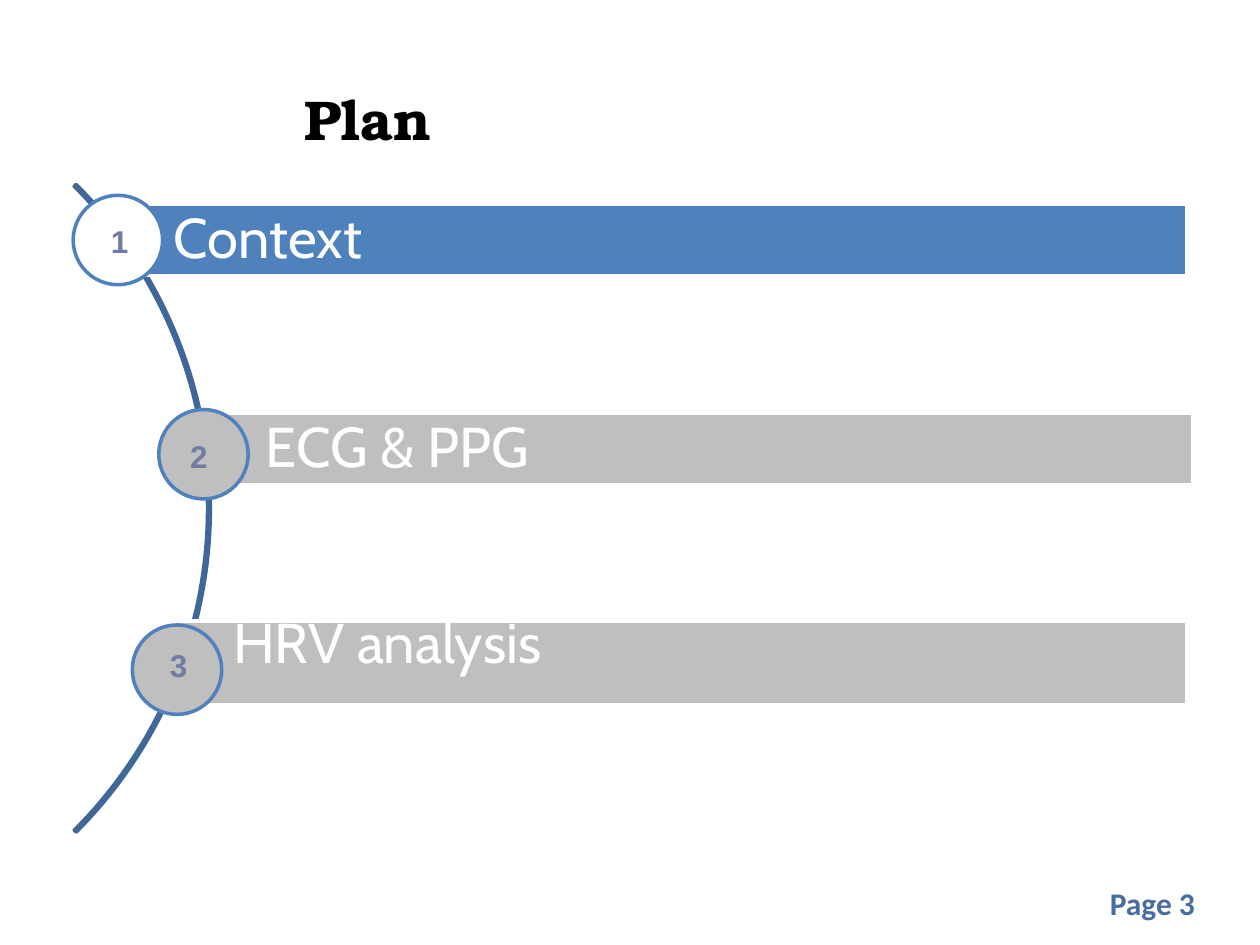
from pptx import Presentation
from pptx.dml.color import RGBColor
from pptx.enum.shapes import MSO_SHAPE
from pptx.enum.text import MSO_ANCHOR
from pptx.util import Pt

COLORS = {
    "white": "FFFFFF",
    "black": "000000",
    "blue": "4F81BD",
    "gray": "BFBFBF",
    "arc": "3F6797",
    "number": "727CA3",
    "page": "486DA2",
}
CIRCLE = 51.1
STEPS = [
    ("1", "Context", "blue", "white", (67, 116.6, 611.3, 41), (41.8, 111.6), (56.2, 123.1), 6.5),
    ("2", "ECG & PPG", "gray", "gray", (119.5, 236.2, 562.3, 41), (90.7, 234), (101.5, 246.2), 6.5),
    ("3", "HRV analysis", "gray", "gray", (100.8, 355, 577.4, 47.5), (75.6, 357.1), (90, 365.8), 26),
]


def color(name):
    """Return the named palette colour."""
    return RGBColor.from_string(COLORS[name])


def add_text(frame, text, size, font, tone, bold=False):
    """Write one styled paragraph into a text frame and return it."""
    para = frame.paragraphs[0]
    para.text = text
    para.font.size = Pt(size)
    para.font.name = font
    para.font.bold = bold
    para.font.color.rgb = color(tone)
    return para


def add_label(page, box, text, size, font, tone, wrap=True, anchor=MSO_ANCHOR.TOP):
    """Place a bold text box in the given box."""
    label = page.shapes.add_textbox(*map(Pt, box))
    label.text_frame.word_wrap = wrap
    label.text_frame.vertical_anchor = anchor
    add_text(label.text_frame, text, size, font, tone, bold=True)
    return label


def add_outlined(page, preset, box, fill, line):
    """Place a preset shape with a two-point outline."""
    shape = page.shapes.add_shape(preset, *map(Pt, box))
    shape.shadow.inherit = False
    if fill:
        shape.fill.solid()
        shape.fill.fore_color.rgb = color(fill)
    else:
        shape.fill.background()
    shape.line.color.rgb = color(line)
    shape.line.width = Pt(2)
    return shape


def add_arc(page, box):
    """Draw the thin arc that links the steps."""
    arc = add_outlined(page, MSO_SHAPE.BLOCK_ARC, box, None, "arc")
    for index, value in enumerate((189, 27, 0.003)):
        arc.adjustments[index] = value


def add_bar(page, box, title, fill, bottom):
    """Draw a step's bar with its title and bottom margin."""
    bar = add_outlined(page, MSO_SHAPE.RECTANGLE, box, fill, "white")
    frame = bar.text_frame
    frame.word_wrap = True
    frame.vertical_anchor = MSO_ANCHOR.MIDDLE
    frame.margin_left = Pt(32.4)
    frame.margin_top = frame.margin_right = Pt(6.5)
    frame.margin_bottom = Pt(bottom)
    para = add_text(frame, title, 32, "Cabin", "white")
    para.alignment = 1
    para.line_spacing = 0.9


def add_number(page, corner, number, fill):
    """Place a step's number over its circle."""
    label = add_label(page, (*corner, 22.3, 28.8), number, 18, "Arial", "number")
    if fill != "white":
        label.fill.solid()
        label.fill.fore_color.rgb = color(fill)


def add_plan(page, box):
    """Draw the arc and its numbered steps."""
    add_arc(page, box)
    for _, title, bar_fill, circle_fill, bar_box, circle_corner, _, bottom in STEPS:
        add_bar(page, bar_box, title, bar_fill, bottom)
        circle_box = (*circle_corner, CIRCLE, CIRCLE)
        add_outlined(page, MSO_SHAPE.OVAL, circle_box, circle_fill, "blue")
    for number, _, _, circle_fill, _, _, number_corner, _ in STEPS:
        add_number(page, number_corner, number, circle_fill)


def main():
    """Build and save the plan slide."""
    deck = Presentation()
    deck.slide_width, deck.slide_height = Pt(720), Pt(540)
    page = deck.slides.add_slide(deck.slide_layouts[6])
    add_label(page, (627.1, 501.8, 84.2, 28.8), "Page 3", 18, "Calibri", "page", wrap=False)
    add_label(page, (167, 12.2, 517, 77.8), "Plan", 32, "TeX Gyre Bonum", "black",
              anchor=MSO_ANCHOR.BOTTOM)
    add_plan(page, (-403.2, 28.8, 523.4, 523.4))
    deck.save("out.pptx")


if __name__ == "__main__":
    main()
